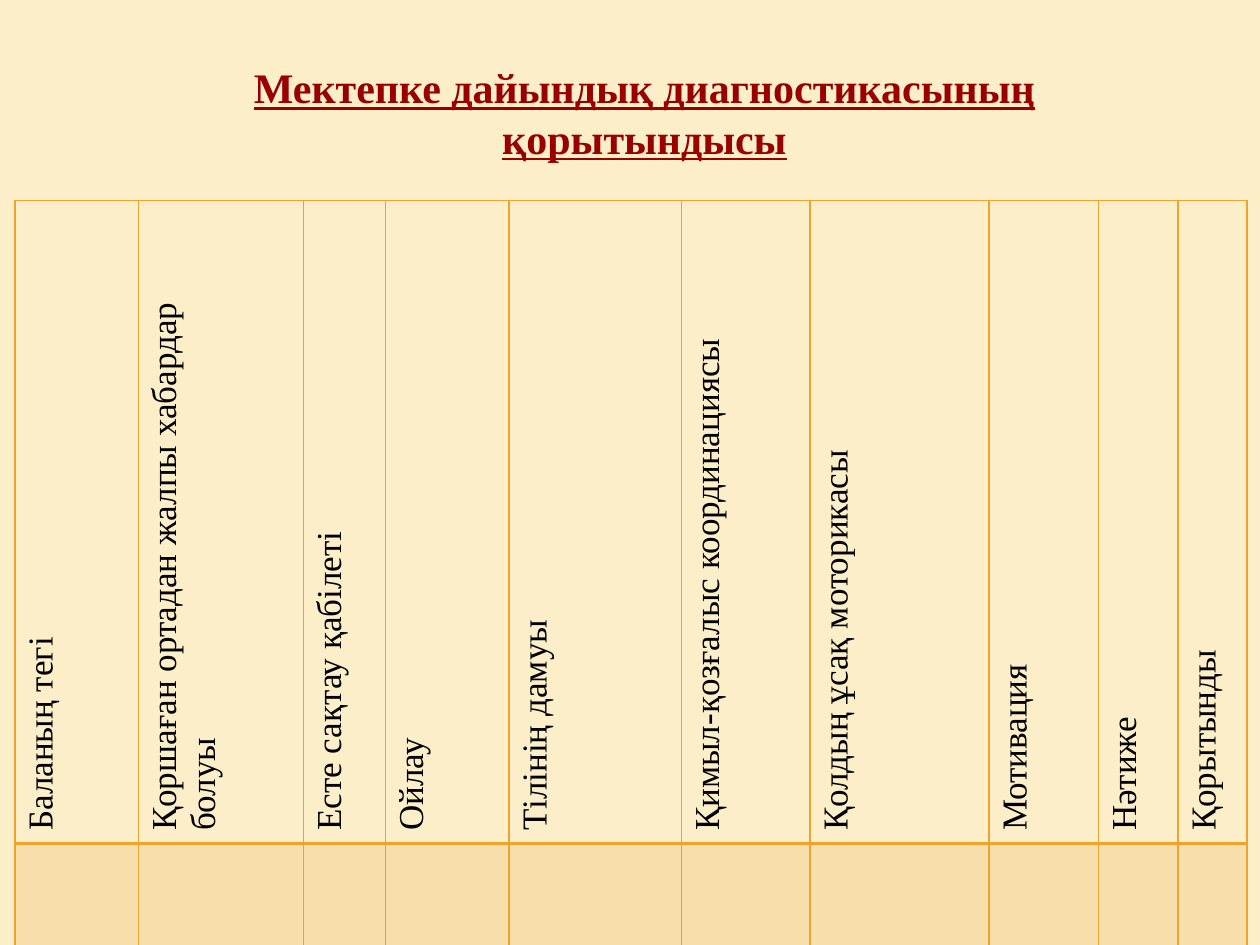
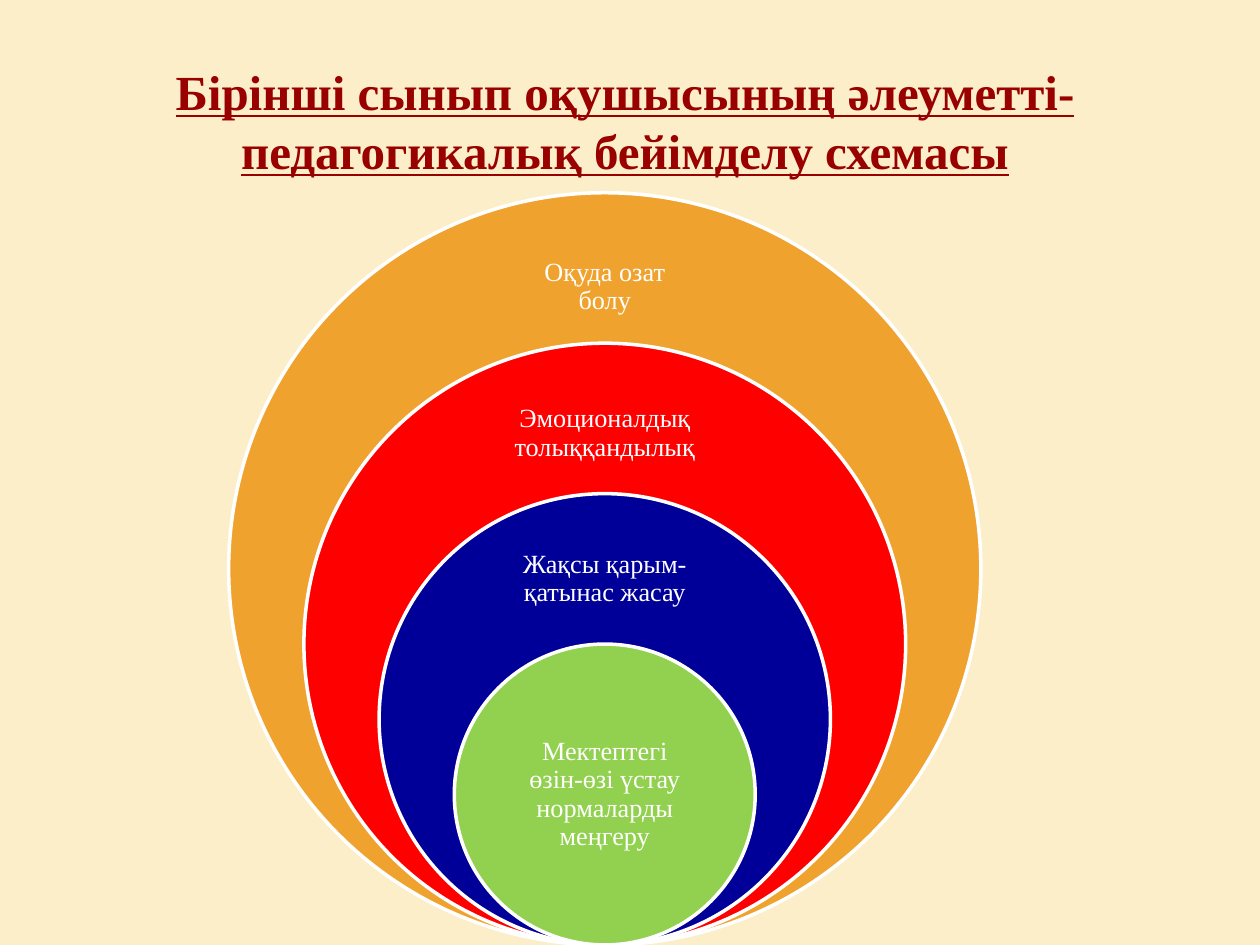
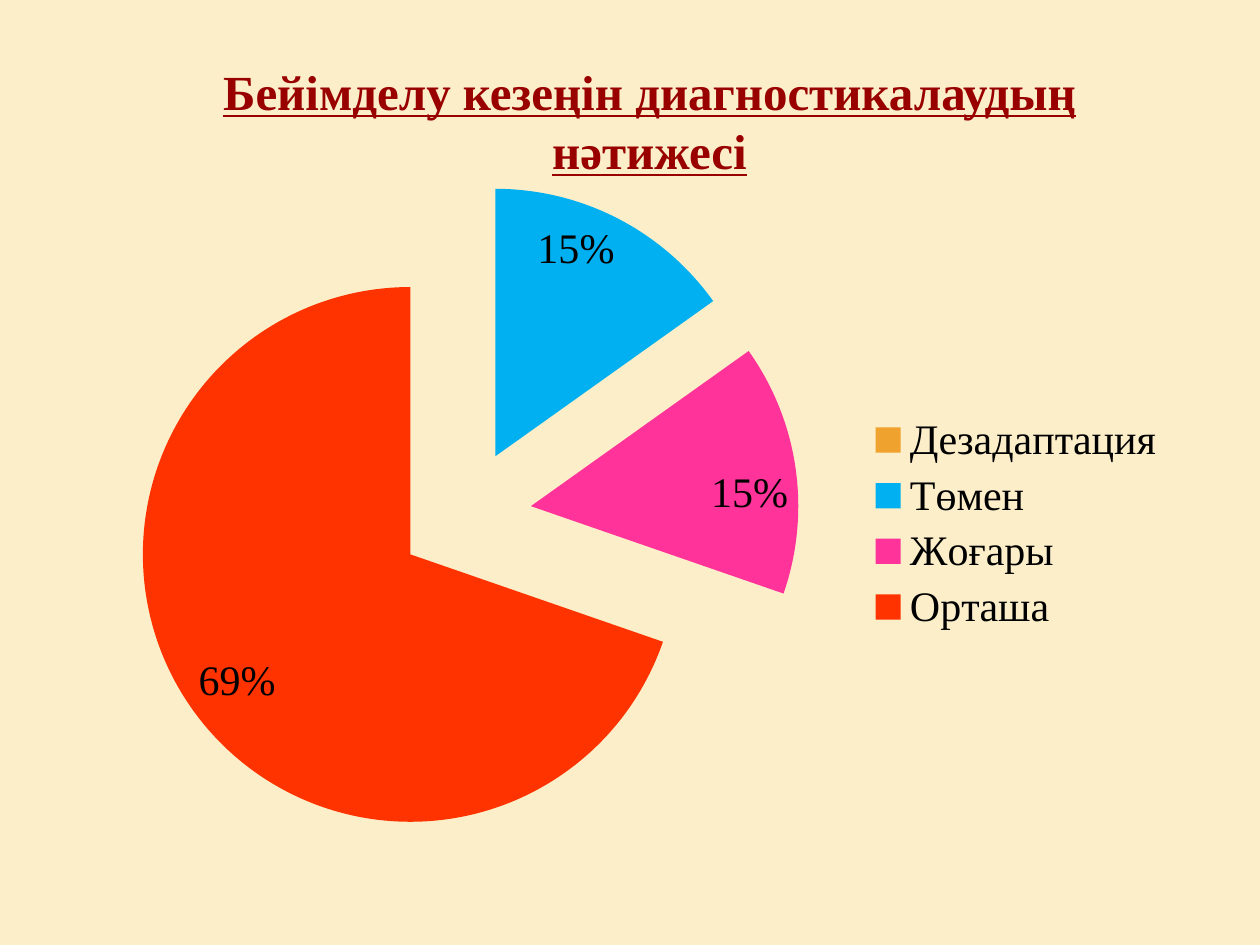
"""Build three slides on school readiness: a table, nested circles and a pie chart."""
from lxml import etree
from pptx import Presentation
from pptx import util as u
from pptx.chart.data import CategoryChartData
from pptx.dml.color import RGBColor
from pptx.enum import chart as charts, shapes, text
from pptx.oxml import ns

PX = u.Inches(1) // 100
SLIDE_SIZE = (1000, 750)

THEME = {
    "font": "Times New Roman",
    "background": "FBEEC9", "title": "990000", "accent": "F0A22E",
    "body": "000000", "light": "FFFFFF",
    "title_small": 24, "title_large": 28, "header": 20, "ring": 15, "chart": 24,
}

TABLE_TITLE = ("Мектепке дайындық диагностикасының қорытындысы", (98, 44, 827, 91))
COLUMNS = [
    ("Баланың тегі", 98), ("Қоршаған ортадан жалпы хабардар болуы", 131),
    ("Есте сақтау қабілеті", 65), ("Ойлау", 98), ("Тілінің дамуы", 137),
    ("Қимыл-қозғалыс координациясы", 102), ("Қолдың ұсақ моторикасы", 142),
    ("Мотивация", 87), ("Нәтиже", 63), ("Қорытынды", 55),
]
ROW_HEIGHTS = (252, 295)
TABLE_ORIGIN = (12, 159)

RINGS_TITLE = ("Бірінші сынып оқушысының әлеуметті-педагогикалық бейімделу схемасы",
               (59, 44, 874, 104))
RINGS = [
    ("Оқуда озат\vболу", "F0A22E", 183, 90),
    ("Эмоционалдық толыққандылық", "FF0000", 301, 86),
    ("Жақсы қарым-қатынас жасау", "000099", 419, 81),
    ("Мектептегі\vөзін-өзі үстау нормаларды меңгеру", "92D050", 571, 119),
]
RING_DIAMETER, RING_CENTRE, RING_BOTTOM, RING_LABEL_WIDTH = 597, 480, 750, 168

CHART_TITLE = ("Бейімделу кезеңін диагностикалаудың нәтижесі", (98, 44, 835, 104))
CHART_BOX = (63, 107, 874, 617)
RESULTS = [
    ("Дезадаптация", 0, "F0A22E"), ("Төмен", 15, "00B0F0"),
    ("Жоғары", 15, "FF3399"), ("Орташа", 69, "FF3300"),
]
PLOT_LAYOUT = {"x": 0.04, "y": 0.06, "w": 0.62, "h": 0.86}
EXPLOSION = 25


def emu(*lengths):
    return [round(length * PX) for length in lengths]


def colour(value):
    return RGBColor.from_string(value)


def add_element(parent, tag, **attributes):
    return etree.SubElement(parent, ns.qn(tag), attributes)


def style_font(font, size, color, bold=False, underline=False):
    font.name, font.size, font.color.rgb = THEME["font"], u.Pt(size), colour(color)
    font.bold, font.underline = bold, underline


def write(frame, content, size, color, bold=False, underline=False, align=None, spacing=None):
    frame.word_wrap = True
    paragraph = frame.paragraphs[0]
    paragraph.text = content
    paragraph.alignment, paragraph.line_spacing = align, spacing
    for run in paragraph.runs:
        style_font(run.font, size, color, bold, underline)


def new_slide(presentation, title, size):
    content, box = title
    slide = presentation.slides.add_slide(presentation.slide_layouts[6])
    frame = slide.shapes.add_textbox(*emu(*box)).text_frame
    write(frame, content, size, THEME["title"], bold=True, underline=True,
          align=text.PP_ALIGN.CENTER)
    frame.auto_size = text.MSO_AUTO_SIZE.SHAPE_TO_FIT_TEXT
    return slide


def set_borders(cell, **widths):
    properties = cell._tc.get_or_add_tcPr()
    for side in "LRTB":
        line = add_element(properties, f"a:ln{side}", w=str(u.Pt(widths.get(side, 1))))
        add_element(add_element(line, "a:solidFill"), "a:srgbClr", val=THEME["accent"])
    return properties


def build_table(presentation):
    slide = new_slide(presentation, TABLE_TITLE, THEME["title_small"])
    size = (sum(width for _, width in COLUMNS), sum(ROW_HEIGHTS))
    table = slide.shapes.add_table(len(ROW_HEIGHTS), len(COLUMNS),
                                   *emu(*TABLE_ORIGIN, *size)).table
    table.first_row = table.horz_banding = False
    for row, height in zip(table.rows, ROW_HEIGHTS):
        row.height = height * PX
    for index, (label, width) in enumerate(COLUMNS):
        table.columns[index].width = width * PX
        header, body = table.cell(0, index), table.cell(1, index)
        write(header.text_frame, label, THEME["header"], THEME["body"])
        set_borders(header, B=2).set("vert", "vert270")
        header.fill.background()
        properties = set_borders(body, T=2)
        body.fill.solid()
        body.fill.fore_color.rgb = colour(THEME["accent"])
        fill_color = properties.find(ns.qn("a:solidFill")).find(ns.qn("a:srgbClr"))
        add_element(fill_color, "a:alpha", val="20000")


def build_rings(presentation):
    slide = new_slide(presentation, RINGS_TITLE, THEME["title_large"])
    group = slide.shapes.add_group_shape().shapes
    for index, (label, fill, label_top, label_height) in enumerate(RINGS):
        diameter = RING_DIAMETER * (5 - index) / 5
        box = (RING_CENTRE - diameter / 2, RING_BOTTOM - diameter, diameter, diameter)
        ring = group.add_shape(shapes.MSO_SHAPE.OVAL, *emu(*box))
        ring.shadow.inherit = False
        ring.fill.solid()
        ring.fill.fore_color.rgb = colour(fill)
        ring.line.color.rgb, ring.line.width = colour(THEME["light"]), u.Pt(2)
        label_box = (RING_CENTRE - RING_LABEL_WIDTH / 2, label_top,
                     RING_LABEL_WIDTH, label_height)
        frame = group.add_textbox(*emu(*label_box)).text_frame
        frame.vertical_anchor = text.MSO_ANCHOR.MIDDLE
        write(frame, label, THEME["ring"], THEME["light"],
              align=text.PP_ALIGN.CENTER, spacing=0.9)


def place_plot(chart):
    area = chart._chartSpace.chart.plotArea
    for layout in area.findall(ns.qn("c:layout")):
        area.remove(layout)
    layout = etree.Element(ns.qn("c:layout"))
    area.insert(0, layout)
    manual = add_element(layout, "c:manualLayout")
    add_element(manual, "c:layoutTarget", val="inner")
    for side in "xy":
        add_element(manual, f"c:{side}Mode", val="edge")
    for side, value in PLOT_LAYOUT.items():
        add_element(manual, f"c:{side}", val=str(value))


def build_chart(presentation):
    slide = new_slide(presentation, CHART_TITLE, THEME["title_large"])
    data = CategoryChartData()
    data.categories = [name for name, _, _ in RESULTS]
    data.add_series("Series 1", [value for _, value, _ in RESULTS])
    chart = slide.shapes.add_chart(charts.XL_CHART_TYPE.PIE, *emu(*CHART_BOX), data).chart
    style_font(chart.font, THEME["chart"], THEME["body"])
    chart.has_title = False
    chart.has_legend = True
    chart.legend.position = charts.XL_LEGEND_POSITION.RIGHT
    chart.legend.include_in_layout = False
    plot = chart.plots[0]
    plot.vary_by_categories = True
    plot.has_data_labels = True
    labels = plot.data_labels
    labels.show_value, labels.show_percentage = True, False
    labels.number_format, labels.number_format_is_linked = '0"%";;;', False
    labels.position = charts.XL_LABEL_POSITION.INSIDE_END
    series = plot.series[0]
    for index, (_, _, fill) in enumerate(RESULTS):
        point = series.points[index].format
        point.fill.solid()
        point.fill.fore_color.rgb = colour(fill)
    explosion = etree.Element(ns.qn("c:explosion"), val=str(EXPLOSION))
    series._element.find(ns.qn("c:dPt")).addprevious(explosion)
    place_plot(chart)


def main():
    presentation = Presentation()
    presentation.slide_width, presentation.slide_height = emu(*SLIDE_SIZE)
    background = presentation.slide_master.background.fill
    background.solid()
    background.fore_color.rgb = colour(THEME["background"])
    build_table(presentation)
    build_rings(presentation)
    build_chart(presentation)
    presentation.save("out.pptx")


if __name__ == "__main__":
    main()
